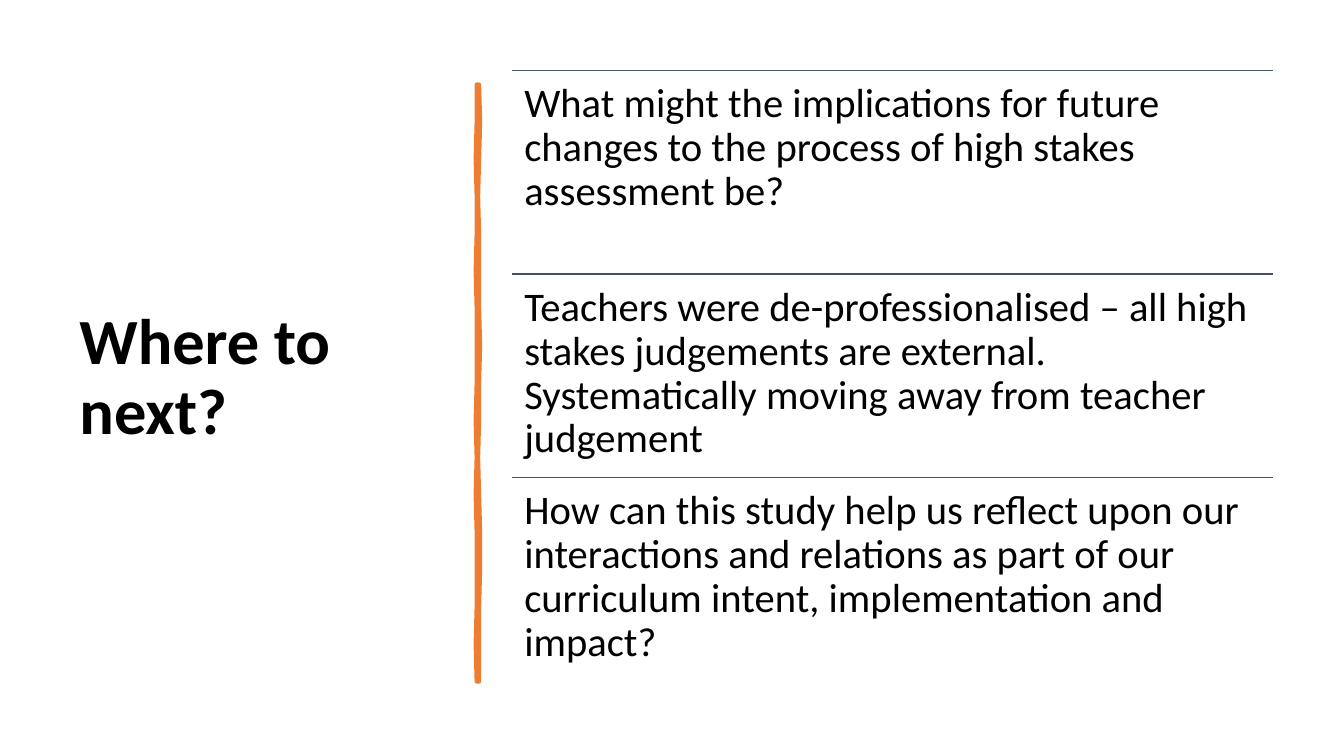
from pptx import Presentation, util as u
from pptx.dml.color import RGBColor
from pptx.enum import shapes, text
from lxml import etree
from pptx.oxml import ns

W, H = u.Inches(13.33), u.Inches(7.5)
LEFT, TOP, COL_W, ROW_H = u.Inches(5.08), u.Inches(0.7), u.Inches(7.55), u.Inches(2.02)
FONT = "Calibri"
COLORS = {"text": "000000", "bar": "ED7D31", "rule": "44546A"}
QUESTIONS = [
    "What might the implications for future changes to the process of high stakes assessment be?",
    "Teachers were de-professionalised – all high stakes judgements are external. "
    "Systematically moving away from teacher judgement",
    "How can this study help us reflect upon our interactions and relations as part of our "
    "curriculum intent, implementation and impact?",
]
BAR_TOP, BAR_STEP = 0.84, 0.37
BAR_RIGHT = [4.75, 4.76, 4.75, 4.74, 4.75, 4.75, 4.75, 4.76, 4.75,
             4.75, 4.74, 4.75, 4.76, 4.76, 4.75, 4.75, 4.75]
BAR_LEFT = [4.73, 4.73, 4.72, 4.73, 4.73, 4.72, 4.73, 4.73, 4.73,
            4.72, 4.73, 4.72, 4.73, 4.73, 4.73, 4.72, 4.73]


def color(name):
    return RGBColor.from_string(COLORS[name])


def add_text(s, words, box, size, bold=False, inset=0.1, anchor=text.MSO_ANCHOR.TOP, after=0):
    tf = s.shapes.add_textbox(*box).text_frame
    tf.word_wrap = True
    tf.vertical_anchor = anchor
    tf.margin_left = tf.margin_right = tf.margin_top = tf.margin_bottom = u.Inches(inset)
    p = tf.paragraphs[0]
    p.text = words
    p.line_spacing = 0.9
    p.space_after = u.Pt(after)
    r = p.runs[0]
    r.font.name, r.font.size, r.font.bold = FONT, u.Pt(size), bold
    r.font.color.rgb = color("text")


def add_rule(s, y):
    ln = s.shapes.add_connector(shapes.MSO_CONNECTOR.STRAIGHT, LEFT, y, LEFT + COL_W, y)
    ln.line.color.rgb = color("rule")
    ln.line.width = u.Pt(1)
    etree.SubElement(ln._element.spPr, ns.qn("a:effectLst"))


def add_bar(s):
    rows = [BAR_TOP + i * BAR_STEP for i in range(len(BAR_RIGHT))]
    edge = list(zip(BAR_RIGHT, rows)) + list(zip(BAR_LEFT, rows))[::-1]
    pts = [(u.Inches(x), u.Inches(y)) for x, y in edge]
    fb = s.shapes.build_freeform(*pts[0], scale=1.0)
    fb.add_line_segments(pts[1:], close=True)
    sp = fb.convert_to_shape()
    sp.shadow.inherit = False
    sp.fill.solid()
    sp.fill.fore_color.rgb = color("bar")
    sp.line.color.rgb = color("bar")
    sp.line.width = u.Pt(3.25)
    etree.SubElement(sp.line._get_or_add_ln(), ns.qn("a:round"))


def main():
    prs = Presentation()
    prs.slide_width, prs.slide_height = W, H
    s = prs.slides.add_slide(prs.slide_layouts[6])
    title_box = (u.Inches(0.69), TOP, u.Inches(3.74), u.Inches(6.11))
    add_text(s, "Where to next?", title_box, 46, bold=True, anchor=text.MSO_ANCHOR.MIDDLE)
    add_bar(s)
    for i, question in enumerate(QUESTIONS):
        y = TOP + i * ROW_H
        add_rule(s, y)
        add_text(s, question, (LEFT, y, COL_W, ROW_H), 29, inset=0.12, after=10)
    prs.save("out.pptx")


if __name__ == "__main__":
    main()
